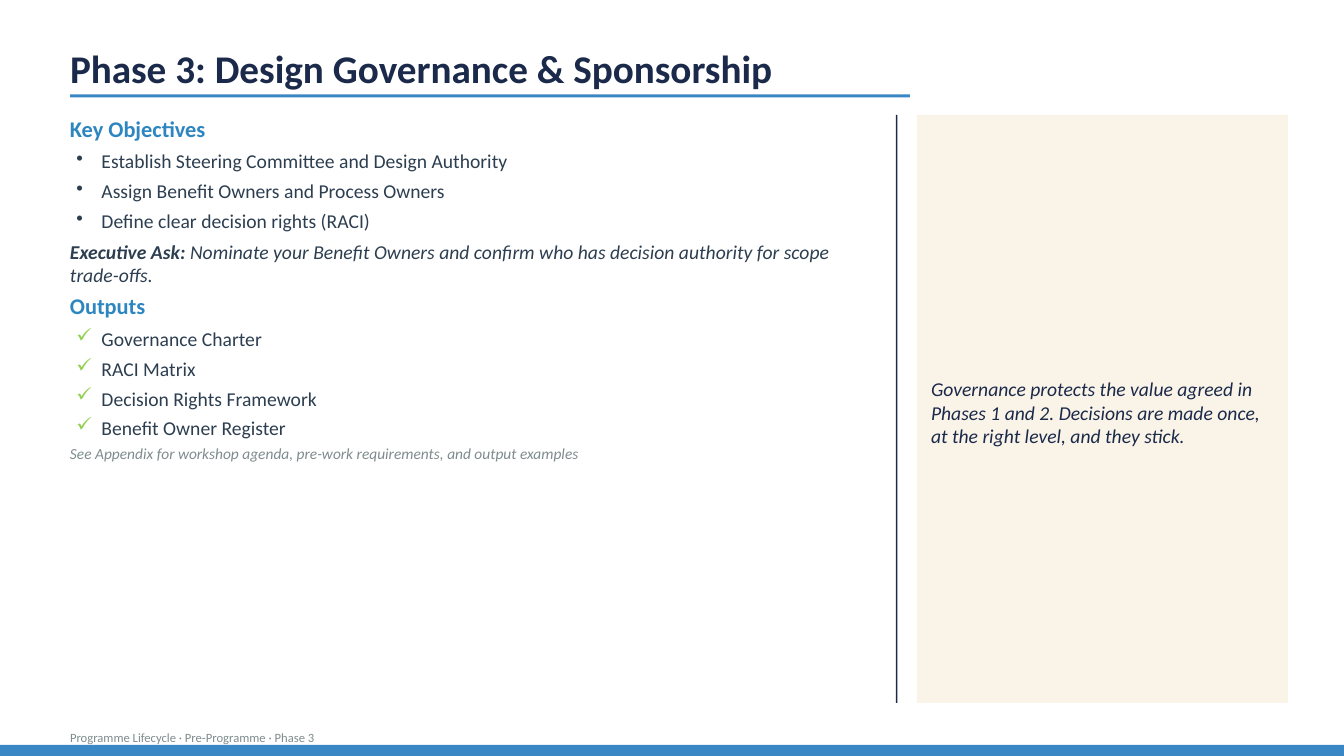
from pptx import Presentation
from pptx.dml.color import RGBColor
from pptx.enum.shapes import MSO_SHAPE
from pptx.enum.text import MSO_ANCHOR
from pptx.oxml.ns import qn
from pptx.util import Inches, Pt
from lxml import etree

RECT = MSO_SHAPE.RECTANGLE
TOP, MIDDLE, BOTTOM = MSO_ANCHOR.TOP, MSO_ANCHOR.MIDDLE, MSO_ANCHOR.BOTTOM


class Theme:
    font = "Calibri"
    navy, blue, head = "1B2A4A", "3A87C6", "2E86C1"
    ink, grey, cream, green = "2C3E50", "7F8C8D", "FAF3E8", "92D050"
    title, section, body, note, foot = 28, 16, 14, 11, 9


# The slide is a grid of 1920 columns by 1080 rows
COLS, ROWS = 1920, 1080
UNIT = Inches(13.33333) / COLS
LEFT, BODY_TOP, BODY_ROWS = 100, 164, 840

deck = Presentation()
deck.slide_width, deck.slide_height = round(COLS * UNIT), round(ROWS * UNIT)
slide = deck.slides.add_slide(deck.slide_layouts[6])


def box(cols_rows, fill=None, anchor=TOP, inset=(0, 0, 0, 0)):
    """Add a filled rectangle, or a text box if no fill is given."""
    place = [round(n * UNIT) for n in cols_rows]
    if fill:
        shape = slide.shapes.add_shape(RECT, *place)
        shape.shadow.inherit = False
        shape.fill.solid()
        shape.fill.fore_color.rgb = RGBColor.from_string(fill)
        shape.line.fill.background()
    else:
        shape = slide.shapes.add_textbox(*place)
    frame = shape.text_frame
    frame.word_wrap = True
    frame.vertical_anchor = anchor
    (frame.margin_left, frame.margin_top, frame.margin_right,
     frame.margin_bottom) = [round(n * UNIT) for n in inset]
    return frame


def write(para, text, size, color, bold=None, italic=None, after=0):
    para.add_run().text = text
    para.alignment = 1
    para.space_after = Pt(after)
    font = para.font
    font.name, font.size, font.bold, font.italic = Theme.font, Pt(size), bold, italic
    font.color.rgb = RGBColor.from_string(color)


# Title and its rule
title = box((LEFT, 40, 1720, 90), anchor=BOTTOM)
write(title.paragraphs[0], "Phase 3: Design Governance & Sponsorship",
      Theme.title, Theme.navy, bold=True)
box((LEFT, 135, 1200, 4), Theme.blue)

# Main column
main = box((LEFT, BODY_TOP, 1140, BODY_ROWS))
sections = [
    ("Key Objectives", "•", None,
     ["Establish Steering Committee and Design Authority",
      "Assign Benefit Owners and Process Owners",
      "Define clear decision rights (RACI)"]),
    ("Outputs", "✓", Theme.green,
     ["Governance Charter", "RACI Matrix", "Decision Rights Framework",
      "Benefit Owner Register"]),
]
for index, (heading, mark, tint, items) in enumerate(sections):
    if index:
        ask = main.add_paragraph()
        write(ask, "Executive Ask: ", Theme.body, Theme.ink, italic=True, after=4)
        ask.space_before = Pt(2)
        ask.runs[0].font.bold = True
        ask.add_run().text = ("Nominate your Benefit Owners and confirm who has "
                              "decision authority for scope trade-offs.")
    para = main.add_paragraph() if index else main.paragraphs[0]
    write(para, heading, Theme.section, Theme.head, bold=True, after=3)
    for item in items:
        para = main.add_paragraph()
        props = para._p.get_or_add_pPr()
        props.set("marL", str(round(45 * UNIT)))
        props.set("indent", str(round(-36 * UNIT)))
        if tint:
            color = etree.SubElement(props, qn("a:buClr"))
            etree.SubElement(color, qn("a:srgbClr"), val=tint)
        etree.SubElement(props, qn("a:buChar"), char=mark)
        para.line_spacing = 1.15
        write(para, item, Theme.body, Theme.ink, after=3 if item == items[-1] else 2)
write(main.add_paragraph(),
      "See Appendix for workshop agenda, pre-work requirements, and output examples",
      Theme.note, Theme.grey, italic=True)

# Divider and side panel
box((1280, BODY_TOP, 2, BODY_ROWS), Theme.navy)
panel = box((1310, BODY_TOP, 530, BODY_ROWS), Theme.cream, MIDDLE, (20, 30, 20, 20))
write(panel.paragraphs[0],
      "Governance protects the value agreed in Phases 1 and 2. "
      "Decisions are made once, at the right level, and they stick.",
      Theme.body, Theme.navy, italic=True)

# Footer
foot = box((LEFT, 1024, 1000, 40), anchor=BOTTOM)
write(foot.paragraphs[0], "Programme Lifecycle · Pre-Programme · Phase 3",
      Theme.foot, Theme.grey)
box((0, 1064, COLS, 16), Theme.blue)

deck.save("out.pptx")
